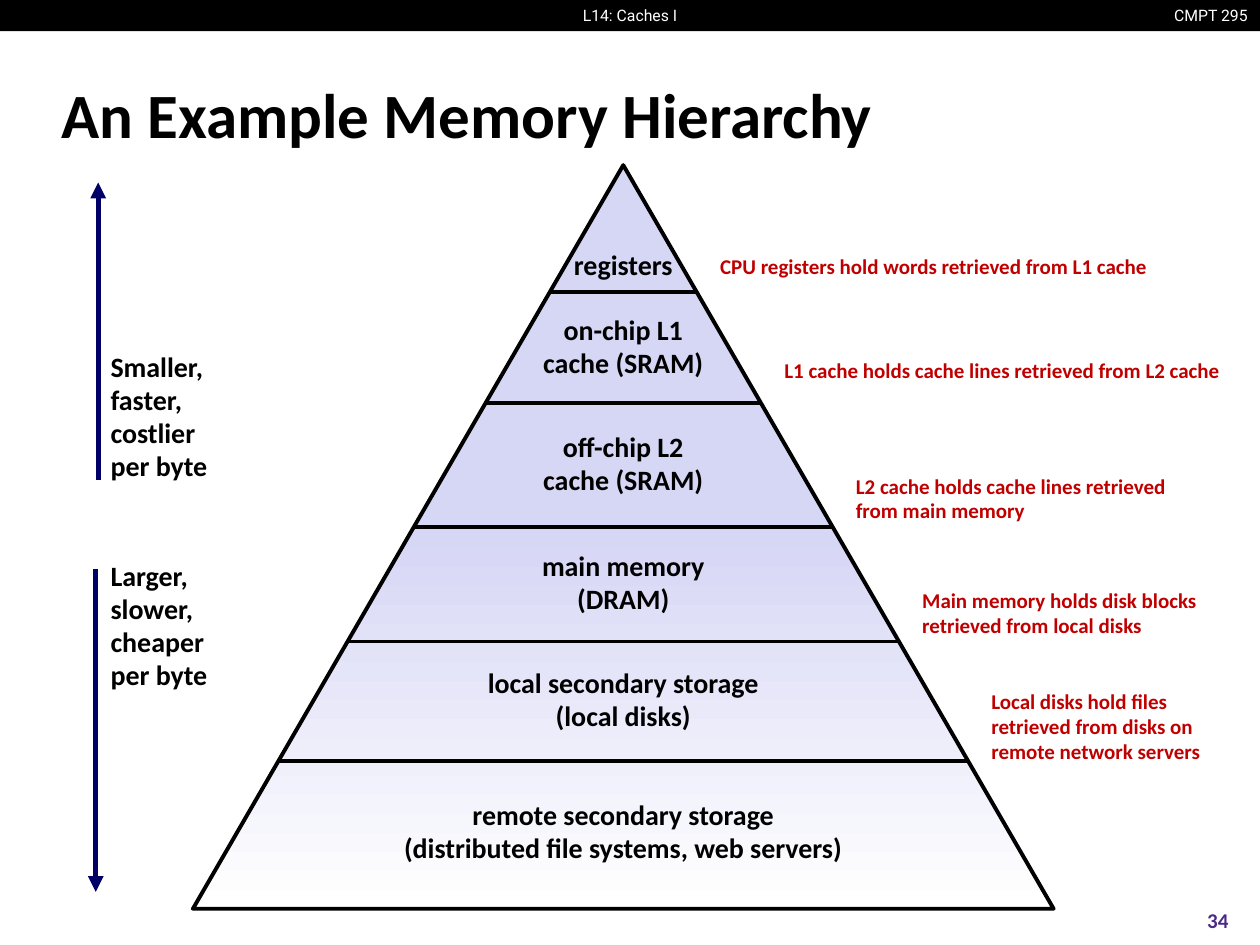
from collections import namedtuple
from copy import deepcopy
from dataclasses import dataclass

from lxml import etree
from pptx import Presentation
from pptx import util as u
from pptx.dml import color as c
from pptx.enum import shapes, text
from pptx.oxml import ns

Box = namedtuple("Box", "left top width height")  # centimetres
Level = namedtuple("Level", "lines centre floor note note_centre note_width")


@dataclass(frozen=True)
class Theme:
    body_font: str = "Calibri"
    header_font: str = "Roboto"
    ink: str = "000000"
    paper: str = "FFFFFF"
    tint: str = "D6D6F5"
    arrow: str = "000066"
    note: str = "C00000"
    number: str = "4B2A85"
    title_size: float = 36
    label_size: float = 16
    note_size: float = 12
    header_size: float = 9
    outline: float = 2.25
    divider: float = 2
    arrow_width: float = 3


THEME = Theme()
LEFT, CENTRE, RIGHT = text.PP_ALIGN.LEFT, text.PP_ALIGN.CENTER, text.PP_ALIGN.RIGHT

# Vertical measures run down from the top of the pyramid
LEVELS = [
    Level(["registers"], 2.02, 2.56,
          "CPU registers hold words retrieved from L1 cache", 2.05, 10.06),
    Level(["on-chip L1", "cache (SRAM)"], 3.67, 4.8,
          "L1 cache holds cache lines retrieved from L2 cache", 4.16, 9.55),
    Level(["off-chip L2", "cache (SRAM)"], 6.03, 7.29,
          "L2 cache holds cache lines retrieved from main memory", 6.73, 7.32),
    Level(["main memory", "(DRAM)"], 8.42, 9.6,
          "Main memory holds disk blocks retrieved from local disks", 9.04, 6.63),
    Level(["local secondary storage", "(local disks)"], 10.78, 12.01,
          "Local disks hold files retrieved from disks on remote network servers",
          11.33, 5.74),
    Level(["remote secondary storage", "(distributed file systems, web servers)"],
          13.45, None, None, None, None),
]


def rgb(value):
    return c.RGBColor.from_string(value)


def in_cm(box):
    return [u.Cm(length) for length in box]


def write(frame, lines, size, color, align=LEFT, font=THEME.body_font,
          bold=True, spacing=None):
    """Fill a text frame with one paragraph for each line."""
    frame.word_wrap = True
    frame.vertical_anchor = text.MSO_ANCHOR.MIDDLE
    for index, line in enumerate(lines):
        para = frame.add_paragraph() if index else frame.paragraphs[0]
        para.alignment = align
        if spacing:
            para.line_spacing = spacing
        span = para.add_run()
        span.text = line
        span.font.name, span.font.size, span.font.bold = font, u.Pt(size), bold
        span.font.color.rgb = rgb(color)


def add_text(page, box, lines, size, color, **style):
    label = page.shapes.add_textbox(*in_cm(box))
    write(label.text_frame, lines, size, color, **style)


def add_line(page, start, end, color, width, arrow=False):
    line = page.shapes.add_connector(
        shapes.MSO_CONNECTOR.STRAIGHT, *in_cm(start + end))
    line.line.color.rgb = rgb(color)
    line.line.width = u.Pt(width)
    properties = line.element.spPr
    if arrow:
        etree.SubElement(properties.find(ns.qn("a:ln")), ns.qn("a:tailEnd"),
                         type="triangle")
    etree.SubElement(properties, ns.qn("a:effectLst"))


def add_header(page, box):
    """Black band with the lecture in the middle and the course at the right."""
    band = page.shapes.add_shape(shapes.MSO_SHAPE.RECTANGLE, *in_cm(box))
    band.shadow.inherit = False
    band.fill.solid()
    band.fill.fore_color.rgb = rgb(THEME.ink)
    band.line.fill.background()
    for words, align in (("L14: Caches I", CENTRE), ("CMPT 295", RIGHT)):
        add_text(page, box, [words], THEME.header_size, THEME.paper,
                 align=align, font=THEME.header_font, bold=False)


def add_title(page, box):
    title = page.shapes.title
    title.left, title.top, title.width, title.height = in_cm(box)
    write(title.text_frame, ["An Example Memory Hierarchy"],
          THEME.title_size, THEME.ink)


def add_triangle(page, box):
    triangle = page.shapes.add_shape(
        shapes.MSO_SHAPE.ISOSCELES_TRIANGLE, *in_cm(box))
    triangle.shadow.inherit = False
    triangle.line.color.rgb = rgb(THEME.ink)
    triangle.line.width = u.Pt(THEME.outline)
    # Plain tint in the upper half, then a fade to white
    triangle.fill.gradient()
    triangle.fill.gradient_angle = 270
    first, last = triangle.fill.gradient_stops
    first.color.rgb, first.position = rgb(THEME.tint), 0
    last.color.rgb, last.position = rgb(THEME.paper), 1
    stop = triangle.element.spPr.find(".//" + ns.qn("a:gs"))
    middle = deepcopy(stop)
    middle.set("pos", "49000")
    stop.addnext(middle)


def add_pyramid(page, box):
    """Triangle cut into levels, each with a label and a note at its edge."""
    add_triangle(page, box)
    middle = box.left + box.width / 2
    label_width, label_height, note_height, note_gap = 12, 1.6, 1.8, 0.22
    for level in LEVELS:
        label = Box(middle - label_width / 2,
                    box.top + level.centre - label_height / 2,
                    label_width, label_height)
        add_text(page, label, level.lines, THEME.label_size, THEME.ink,
                 align=CENTRE, spacing=0.98)
        if level.floor is None:
            continue
        half = box.width / 2 * level.floor / box.height
        floor = box.top + level.floor
        add_line(page, (middle - half, floor), (middle + half, floor),
                 THEME.ink, THEME.divider)
        note = Box(middle + half + note_gap,
                   box.top + level.note_centre - note_height / 2,
                   level.note_width, note_height)
        add_text(page, note, [level.note], THEME.note_size, THEME.note,
                 spacing=0.98)


def add_trend(page, box, lines, text_top, upward):
    """Arrow along the left edge of the box with words beside it."""
    ends = [(box.left, box.top), (box.left, box.top + box.height)]
    start, end = reversed(ends) if upward else ends
    add_line(page, start, end, THEME.arrow, THEME.arrow_width, arrow=True)
    words = Box(1.98, box.top + text_top, box.width, 2.95)
    add_text(page, words, lines, THEME.label_size, THEME.ink, spacing=0.98)


def add_page_number(page, box):
    add_text(page, box, ["34"], THEME.note_size, THEME.number, align=CENTRE)


def main():
    deck = Presentation()
    deck.slide_width, deck.slide_height = u.Cm(25.4), u.Cm(19.05)
    page = deck.slides.add_slide(deck.slide_layouts[5])
    add_header(page, Box(0, 0, 25.4, 0.63))
    add_title(page, Box(0.99, 1.22, 23.34, 2.11))
    add_pyramid(page, Box(3.89, 3.33, 17.35, 14.99))
    add_trend(page, Box(1.98, 3.68, 2.6, 6),
              ["Smaller,", "faster,", "costlier", "per byte"], 3.25, True)
    add_trend(page, Box(1.93, 11.48, 2.6, 6.5),
              ["Larger,", "slower,", "cheaper", "per byte"], -0.33, False)
    add_page_number(page, Box(23.7, 18.03, 1.7, 1.02))
    deck.save("out.pptx")


if __name__ == "__main__":
    main()
